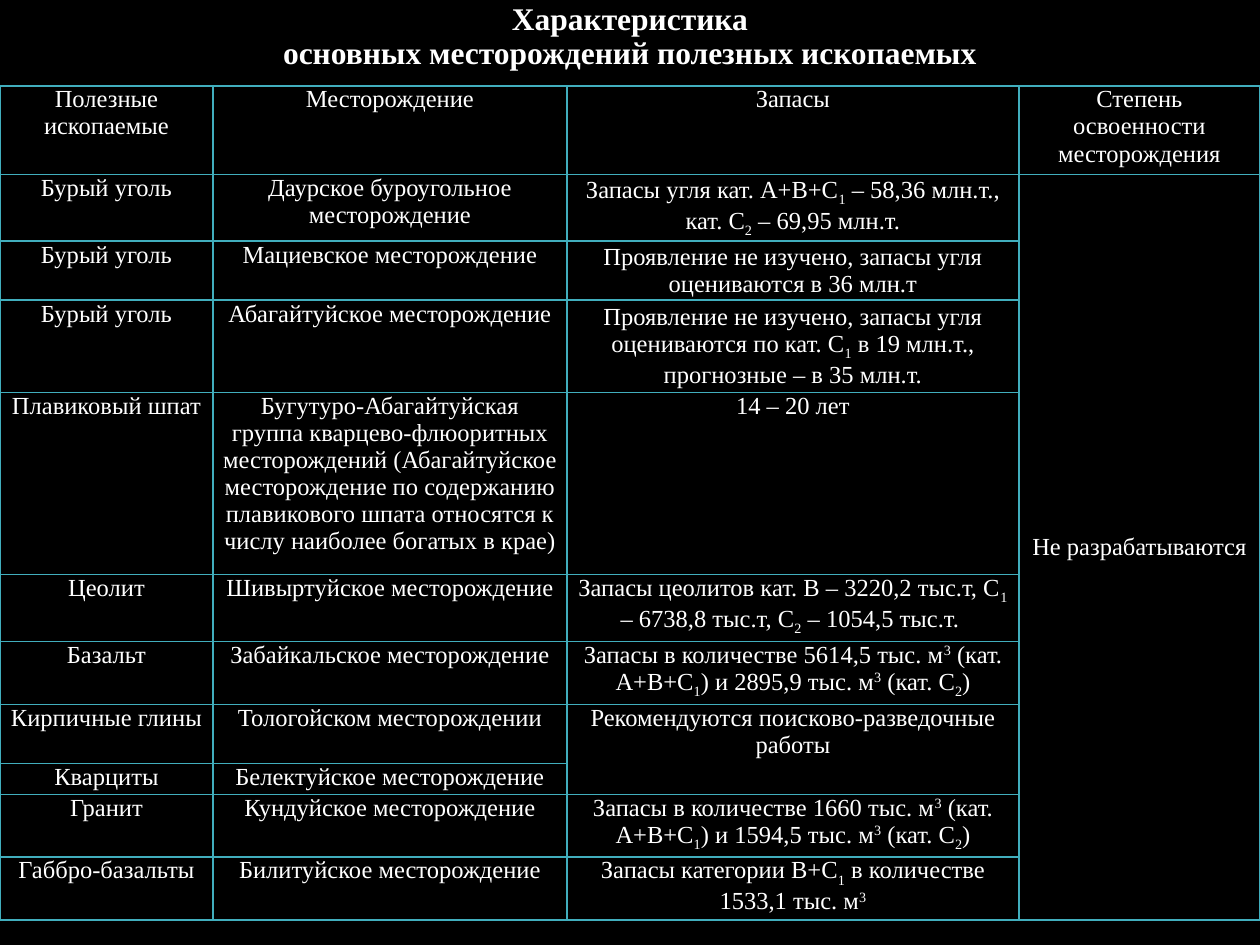
"""Build a slide with a table of the main mineral deposits."""
from lxml.etree import SubElement
from pptx import Presentation
from pptx.dml.color import RGBColor as RGB
from pptx.enum.text import MSO_ANCHOR as ANCHOR, PP_ALIGN as ALIGN
from pptx.oxml.ns import qn
from pptx.util import Pt

PX = 914400 // 126
COLORS = {"bg": "000000", "text": "FFFFFF", "border": "41AEBD"}
BASELINES = {"_": "-25000", "^": "30000"}
COLS = [213, 354, 452, 241]
HEIGHTS = [88, 59, 59, 88, 182, 59, 59, 59, 31, 59, 59]
ROWS = [
    ["Полезные ископаемые", "Месторождение", "Запасы", "Степень освоенности месторождения"],
    ["Бурый уголь", "Даурское буроугольное месторождение",
     "Запасы угля кат. А+В+С|_1| – 58,36 млн.т., кат. С|_2| – 69,95 млн.т.", "Не разрабатываются"],
    ["Бурый уголь", "Мациевское месторождение",
     "Проявление не изучено, запасы угля оцениваются в 36 млн.т"],
    ["Бурый уголь", "Абагайтуйское месторождение",
     "Проявление не изучено, запасы угля оцениваются по кат. С|_1| в 19 млн.т., прогнозные – в 35 млн.т."],
    ["Плавиковый шпат",
     "Бугутуро-Абагайтуйская группа кварцево-флюоритных месторождений (Абагайтуйское месторождение "
     "по содержанию плавикового шпата относятся к числу наиболее богатых в крае)", "14 – 20 лет"],
    ["Цеолит", "Шивыртуйское месторождение",
     "Запасы цеолитов кат. В – 3220,2 тыс.т, С|_1| – 6738,8 тыс.т, С|_2| – 1054,5 тыс.т. "],
    ["Базальт", "Забайкальское месторождение",
     "Запасы в количестве 5614,5 тыс. м|^3| (кат. А+В+С|_1|) и 2895,9 тыс. м|^3| (кат. С|_2|)"],
    ["Кирпичные глины", "Тологойском месторождении", "Рекомендуются поисково-разведочные работы"],
    ["Кварциты", "Белектуйское месторождение"],
    ["Гранит", "Кундуйское месторождение",
     "Запасы в количестве 1660 тыс. м|^3| (кат. А+В+С|_1|) и 1594,5 тыс. м|^3| (кат. С|_2|)"],
    ["Габбро-базальты", "Билитуйское месторождение",
     "Запасы категории В+С|_1| в количестве 1533,1 тыс. м|^3"],
]
MIDDLE = {(1, 2), (1, 3), (2, 2), (3, 2)}


def add_run(p, text, size, bold=False):
    r = p.add_run()
    r.text = text
    r.font.name = "Times New Roman"
    r.font.size = Pt(size)
    r.font.bold = bold
    r.font.color.rgb = RGB.from_string(COLORS["text"])
    return r


def add_borders(cell):
    tc_pr = cell._tc.get_or_add_tcPr()
    for side in ("lnL", "lnR", "lnT", "lnB"):
        ln = SubElement(tc_pr, qn(f"a:{side}"), w=str(Pt(1)))
        fill = SubElement(ln, qn("a:solidFill"))
        SubElement(fill, qn("a:srgbClr"), val=COLORS["border"])


prs = Presentation()
prs.slide_width, prs.slide_height = 1260 * PX, 945 * PX
s = prs.slides.add_slide(prs.slide_layouts[6])
s.background.fill.solid()
s.background.fill.fore_color.rgb = RGB.from_string(COLORS["bg"])

title = s.shapes.add_textbox(0, 1 * PX, 1260 * PX, 73 * PX)
tf = title.text_frame
tf.word_wrap = True
tf.vertical_anchor = ANCHOR.MIDDLE
p = tf.paragraphs[0]
p.alignment = ALIGN.CENTER
p.line_spacing = 0.9
add_run(p, "Характеристика", 18, True)
p.add_line_break()
add_run(p, "основных месторождений полезных ископаемых", 18, True)

frame = s.shapes.add_table(len(ROWS), len(COLS), 0, 86 * PX, sum(COLS) * PX, sum(HEIGHTS) * PX)
table = frame.table
table.first_row = table.horz_banding = False
for col, width in zip(table.columns, COLS):
    col.width = width * PX
for row, height in zip(table.rows, HEIGHTS):
    row.height = height * PX
table.cell(1, 3).merge(table.cell(10, 3))
table.cell(7, 2).merge(table.cell(8, 2))

for i in range(len(ROWS)):
    for j in range(len(COLS)):
        cell = table.cell(i, j)
        add_borders(cell)
        cell.fill.background()
        cell.margin_left = cell.margin_right = 10 * PX
        cell.margin_top = cell.margin_bottom = 0
        cell.vertical_anchor = ANCHOR.MIDDLE if (i, j) in MIDDLE else ANCHOR.TOP
        if j >= len(ROWS[i]):
            continue
        p = cell.text_frame.paragraphs[0]
        p.alignment = ALIGN.CENTER
        for part in ROWS[i][j].split("|"):
            base = BASELINES.get(part[0])
            r = add_run(p, part[1:] if base else part, 14)
            if base:
                r.font._element.set("baseline", base)

prs.save("out.pptx")
